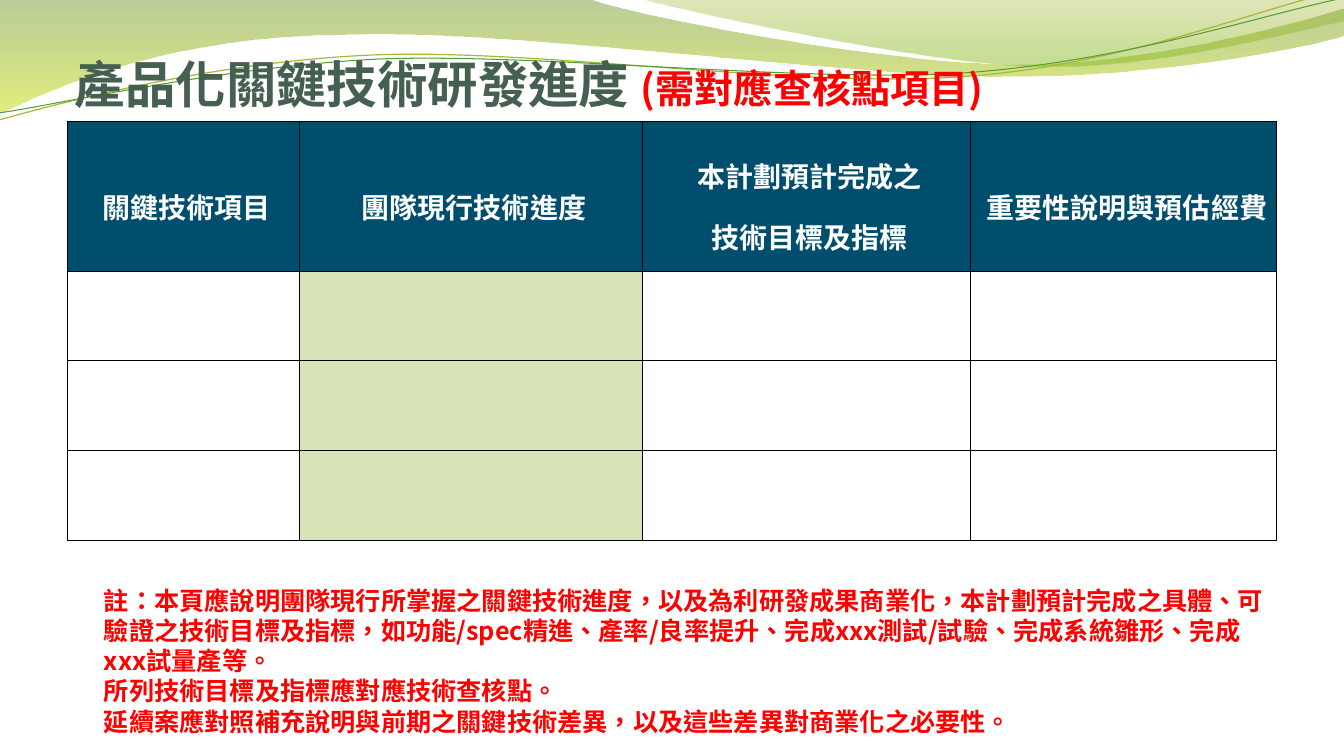
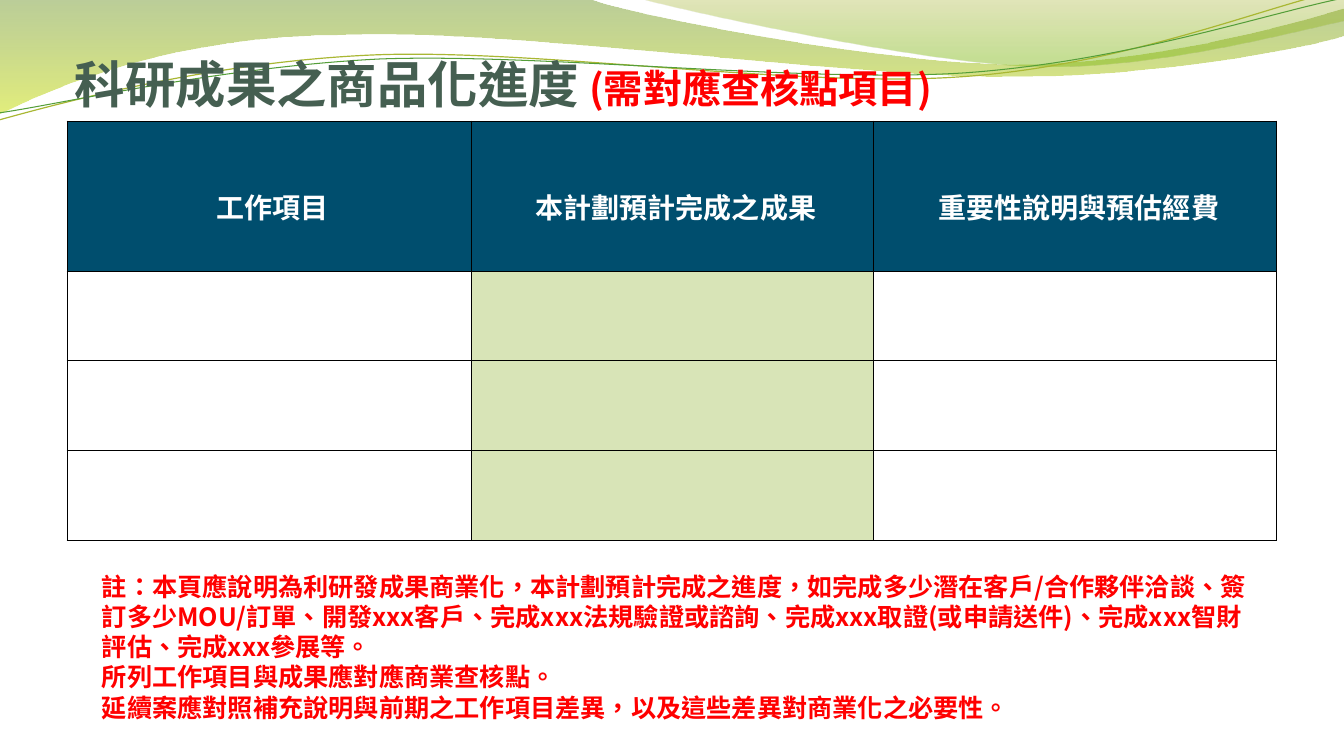
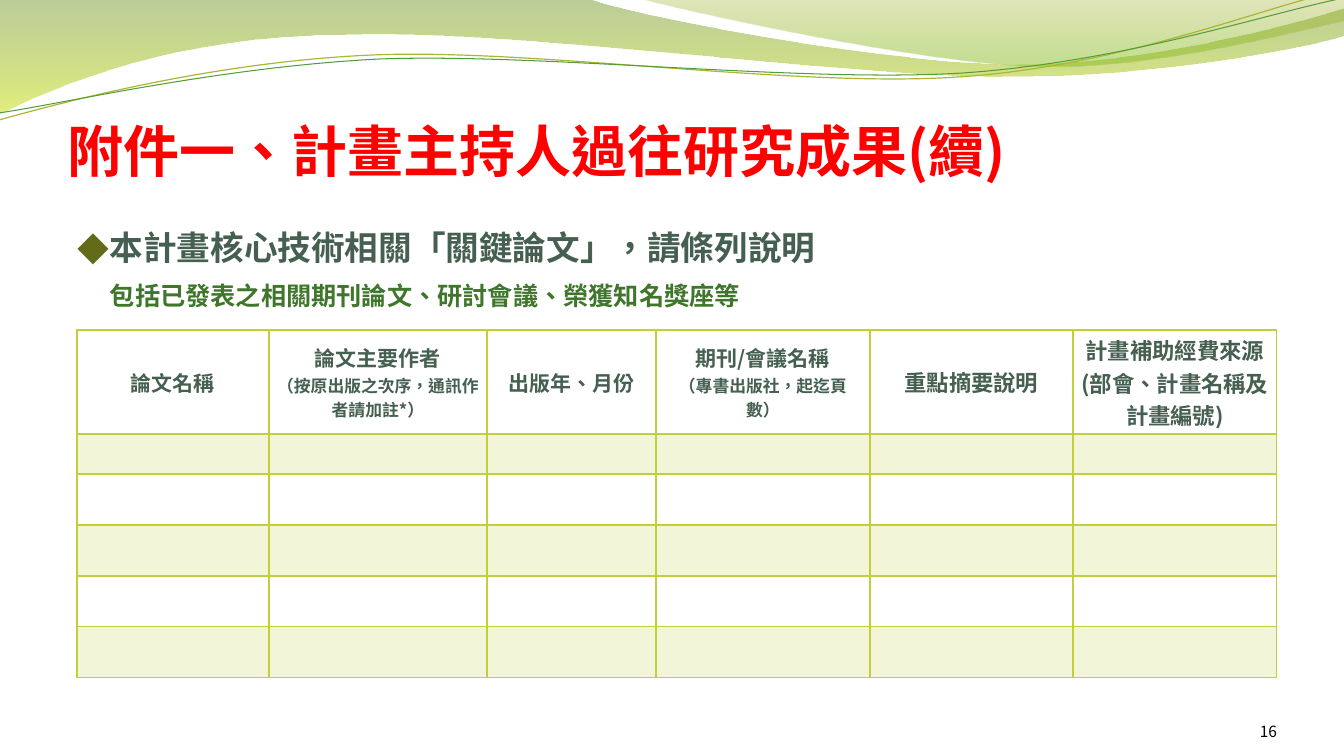
from math import cos, radians, sin

from lxml import etree
from pptx import Presentation
from pptx.dml.color import RGBColor
from pptx.enum.text import MSO_ANCHOR as Anchor, MSO_AUTO_SIZE as AutoSize, PP_ALIGN as Align
from pptx.oxml.ns import qn
from pptx.util import Pt

SCALE = 12192000 / 1344  # EMU per px
SANS_SC, SANS_TC = "Noto Sans CJK SC", "Noto Sans CJK TC"
RED, WHITE, BLACK = "FF0000", "FFFFFF", "000000"
SLATE, GREEN, OLIVE = "455F51", "3F762B", "626B1A"
NAVY, SAGE, LIME = "004E6E", "D8E4B7", "C0CF3A"

# Wave outlines: a start point, then 2 numbers for a line or 6 for a curve
BROAD_WAVE = [(0, 0), (592, 0), (639, 17, 891, 64, 1019, 64), (1146, 64, 1287, 26, 1344, 9),
              (1345, 36), (1321, 44, 1168, 77, 1002, 76), (836, 76, 513, 29, 346, 35),
              (173, 36, 61, 84, -2, 114)]
RIGHT_WAVE = [(643, 0), (684, 11, 916, 62, 1033, 66), (1149, 70, 1292, 32, 1344, 21), (1344, 0)]
OLIVE_LINE = [(-1, 120), (64, 102, 212, 62, 372, 55), (531, 48, 795, 88, 957, 77),
              (1119, 67, 1261, 8, 1341, -10)]
GREEN_LINE = [(-1, 113), (62, 104, 220, 67, 380, 59), (541, 53, 802, 83, 963, 73),
              (1124, 62, 1265, 14, 1344, -2)]
LINE_TILT = -2.7  # degrees


def px(length):
    return round(length * SCALE)


def rgb(color):
    return RGBColor.from_string(color)


def add_alpha(element, percents):
    for color, percent in zip(element.iter(qn("a:srgbClr")), percents):
        etree.SubElement(color, qn("a:alpha"), val=str(percent * 1000))


# Waves

def turn_back(points, degrees):
    """Undo a rotation about the middle of the points."""
    middle_x, middle_y = [(min(axis) + max(axis)) / 2 for axis in zip(*points)]
    c, s = cos(radians(-degrees)), sin(radians(-degrees))
    return [(middle_x + (x - middle_x) * c - (y - middle_y) * s,
             middle_y + (x - middle_x) * s + (y - middle_y) * c) for x, y in points]


def add_outline(slide, outline, close, tilt=0):
    points = [part[i:i + 2] for part in outline for i in range(0, len(part), 2)]
    start, *rest = [(px(x), px(y)) for x, y in turn_back(points, tilt)]
    builder = slide.shapes.build_freeform(*start, scale=1.0)
    builder.add_line_segments(rest, close=close)
    wave = builder.convert_to_shape()
    wave.rotation = tilt
    wave.shadow.inherit = False
    segments = iter(list(wave.element.iter(qn("a:lnTo"))))
    for part in outline[1:]:
        first = next(segments)
        if len(part) == 6:
            first.tag = qn("a:cubicBezTo")
            for _ in range(2):
                control = next(segments)
                first.append(control[0])
                control.getparent().remove(control)
    return wave


def add_wave(slide, outline, stops):
    wave = add_outline(slide, outline, True)
    wave.line.fill.background()
    wave.fill.gradient()
    wave.fill.gradient_angle = 270
    for stop, (position, color, _) in zip(wave.fill.gradient_stops, stops):
        stop.position = position
        stop.color.rgb = rgb(color)
    add_alpha(wave.element, [opacity for _, _, opacity in stops])
    return wave


def add_wave_line(slide, outline, color, width):
    wave = add_outline(slide, outline, False, LINE_TILT)
    wave.fill.background()
    wave.line.color.rgb = rgb(color)
    wave.line.width = Pt(width)
    return wave


def decorate_layout(layout, slide):
    """Draw the waves on a slide and move them behind the layout's title."""
    for placeholder in list(layout.placeholders):
        if placeholder.placeholder_format.idx:
            placeholder.element.getparent().remove(placeholder.element)
    waves = [add_wave(slide, BROAD_WAVE, [(0, "69921C", 45), (1, "CCE10F", 55)]),
             add_wave(slide, RIGHT_WAVE, [(0, "9BAA1A", 30), (0.8, "81BA16", 45)]),
             add_wave_line(slide, OLIVE_LINE, "A9B733", 0.85),
             add_wave_line(slide, GREEN_LINE, "549E39", 0.75)]
    for wave in waves:
        layout.placeholders[0].element.addprevious(wave.element)


# Text

def format_run(run, size, color, font=SANS_SC, bold=True):
    run.font.size = Pt(size)
    run.font.bold = bold
    run.font.color.rgb = rgb(color)
    run.font.name = font
    properties = run._r.get_or_add_rPr()
    properties.set("lang", "zh-TW")
    etree.SubElement(properties, qn("a:ea"), typeface=font)


def format_paragraph(paragraph, align=Align.LEFT, spacing=1.0, margin=0, indent=0):
    paragraph.alignment = align
    paragraph.line_spacing = spacing
    properties = paragraph._p.get_or_add_pPr()
    properties.set("marL", str(px(margin)))
    properties.set("indent", str(px(indent)))


def set_insets(target, left, top, right, bottom):
    target.margin_left, target.margin_top = px(left), px(top)
    target.margin_right, target.margin_bottom = px(right), px(bottom)


def add_text(slide, box, text, size, color, font=SANS_SC, bold=True, **layout):
    frame = slide.shapes.add_textbox(*map(px, box)).text_frame
    frame.word_wrap = True
    frame.text = text
    for paragraph in frame.paragraphs:
        format_paragraph(paragraph, **layout)
        format_run(paragraph.runs[0], size, color, font, bold)
    return frame


def add_bullet(paragraph, mark, color, percent):
    properties = paragraph._p.get_or_add_pPr()
    bullet_color = etree.SubElement(properties, qn("a:buClr"))
    etree.SubElement(bullet_color, qn("a:srgbClr"), val=color)
    etree.SubElement(properties, qn("a:buSzPct"), val=str(percent * 1000))
    etree.SubElement(properties, qn("a:buFont"), typeface=SANS_TC)
    etree.SubElement(properties, qn("a:buChar"), char=mark)


def set_title(slide, box, parts, anchor, **layout):
    """Each part is a text with its size, colour and font."""
    title = slide.shapes.title
    title.left, title.top, title.width, title.height = map(px, box)
    frame = title.text_frame
    frame.auto_size = AutoSize.NONE
    frame.word_wrap = True
    frame.vertical_anchor = anchor
    set_insets(frame, 0, 5, 0, 0)
    heading = frame.paragraphs[0]
    format_paragraph(heading, **layout)
    for text, *style in parts:
        run = heading.add_run()
        run.text = text
        format_run(run, *style)


# Tables

def set_borders(cell, color, widths):
    """Widths are in points: left, right, top, bottom."""
    properties = cell._tc.get_or_add_tcPr()
    for index, (side, width) in enumerate(zip("LRTB", widths)):
        border = etree.Element(qn(f"a:ln{side}"), w=str(Pt(width)))
        fill = etree.SubElement(border, qn("a:solidFill"))
        etree.SubElement(fill, qn("a:srgbClr"), val=color)
        properties.insert(index, border)


def add_grid(slide, left, top, columns, rows):
    table = slide.shapes.add_table(len(rows), len(columns), px(left), px(top),
                                   px(sum(columns)), px(sum(rows))).table
    table.first_row = table.horz_banding = False
    for column, width in zip(table.columns, columns):
        column.width = px(width)
    for row, height in zip(table.rows, rows):
        row.height = px(height)
    for cell in table.iter_cells():
        set_insets(cell, 0, 0, 0, 0)
        cell.vertical_anchor = Anchor.MIDDLE
    return table


def fill_cell(cell, color, opacity=100):
    cell.fill.solid()
    cell.fill.fore_color.rgb = rgb(color)
    if opacity < 100:
        add_alpha(cell._tc.get_or_add_tcPr(), [opacity])


def fill_header(cell, text, sizes, color, **layout):
    cell.text_frame.text = text
    for paragraph, size in zip(cell.text_frame.paragraphs, sizes):
        format_paragraph(paragraph, Align.CENTER, **layout)
        format_run(paragraph.runs[0], size, color)


def add_progress_table(slide, columns, headers):
    table = add_grid(slide, 67, 121, columns, [150, 90, 90, 90])
    for row_index, row in enumerate(table.rows):
        for column_index, cell in enumerate(row.cells):
            if row_index == 0:
                fill_header(cell, headers[column_index], (20, 20), WHITE, spacing=1.5, margin=7)
                fill_cell(cell, NAVY)
            else:
                fill_cell(cell, SAGE if column_index == 1 else WHITE)
            set_borders(cell, BLACK, [0.75] * 4)


def add_paper_table(slide, columns, headers):
    table = add_grid(slide, 77, 330, columns, [104, 40, 51, 51, 51, 51])
    for row_index, row in enumerate(table.rows):
        for column_index, cell in enumerate(row.cells):
            if row_index == 0:
                set_insets(cell, 7, 4, 7, 4)
                fill_header(cell, *headers[column_index], SLATE)
            if row_index % 2:
                fill_cell(cell, LIME, 20)
            else:
                cell.fill.background()
            set_borders(cell, LIME, (1, 1, 1, 2 if row_index == 0 else 1))


# Slides

def build_progress_slide(slide, title_parts, columns, headers, note_box, note):
    checkpoint_hint = ("(需對應查核點項目)", 28, RED, SANS_SC)
    set_title(slide, (68, 37, 1210, 58), [*title_parts, checkpoint_hint],
              Anchor.MIDDLE, spacing=1.5, margin=7)
    add_progress_table(slide, columns, headers)
    add_text(slide, note_box, note, 18, RED)


def build_papers_slide(slide):
    set_title(slide, (68, 58, 1210, 126),
              [("附件一、計畫主持人過往研究成果(續)", 40, RED, SANS_SC)], Anchor.BOTTOM)
    request = add_text(slide, (68, 202, 1233, 76), "本計畫核心技術相關「關鍵論文」，請條列說明",
                       24, SLATE, spacing=1.5, margin=30, indent=-30).paragraphs[0]
    request.space_before = Pt(4.8)
    add_bullet(request, "◆", OLIVE, 95)
    add_paper_table(slide, [192, 218, 169, 214, 203, 204], [
        ("論文名稱", [15]),
        ("論文主要作者\n（按原出版之次序，通訊作者請加註*）", [15, 12]),
        ("出版年、月份", [15]),
        ("期刊/會議名稱\n（專書出版社，起迄頁數）", [15, 12]),
        ("重點摘要說明", [16]),
        ("計畫補助經費來源\n(部會、計畫名稱及計畫編號)", [16, 16]),
    ])
    page_number = add_text(slide, (1165, 701, 112, 40), "16", 11, BLACK, SANS_TC, False,
                           align=Align.RIGHT)
    page_number.vertical_anchor = Anchor.BOTTOM
    set_insets(page_number, 0, 0, 0, 0)
    add_text(slide, (100, 260, 1167, 56), "包括已發表之相關期刊論文、研討會議、榮獲知名獎座等",
             18, GREEN, spacing=1.5)


def main():
    deck = Presentation()
    deck.slide_width, deck.slide_height = px(1344), px(756)
    layout = deck.slide_layouts[5]
    technology, commercial, papers = [deck.slides.add_slide(layout) for _ in range(3)]
    decorate_layout(layout, technology)

    build_progress_slide(
        technology, [("產品化關鍵技術研發進度 ", 36, SLATE, SANS_TC)], [232, 343, 328, 307],
        ["關鍵技術項目", "團隊現行技術進度", "本計劃預計完成之\n技術目標及指標", "重要性說明與預估經費"],
        (94, 580, 1191, 163),
        "註：本頁應說明團隊現行所掌握之關鍵技術進度，以及為利研發成果商業化，本計劃預計完成之具體、"
        "可驗證之技術目標及指標，如功能/spec精進、產率/良率提升、完成xxx測試/試驗、完成系統雛形、"
        "完成xxx試量產等。\n"
        "所列技術目標及指標應對應技術查核點。\n"
        "延續案應對照補充說明與前期之關鍵技術差異，以及這些差異對商業化之必要性。")
    build_progress_slide(
        commercial,
        [("科研成果之商品化進度", 36, SLATE, SANS_TC), (" ", 32, BLACK, SANS_SC)],
        [404, 403, 403],
        ["工作項目", "本計劃預計完成之成果", "重要性說明與預估經費"],
        (92, 566, 1165, 163),
        "註：本頁應說明為利研發成果商業化，本計劃預計完成之進度，如完成多少潛在客戶/合作夥伴洽談、"
        "簽訂多少MOU/訂單、開發xxx客戶、完成xxx法規驗證或諮詢、完成xxx取證(或申請送件)、"
        "完成xxx智財評估、完成xxx參展等。\n"
        "所列工作項目與成果應對應商業查核點。\n"
        "延續案應對照補充說明與前期之工作項目差異，以及這些差異對商業化之必要性。")
    build_papers_slide(papers)
    deck.save("out.pptx")


if __name__ == "__main__":
    main()
